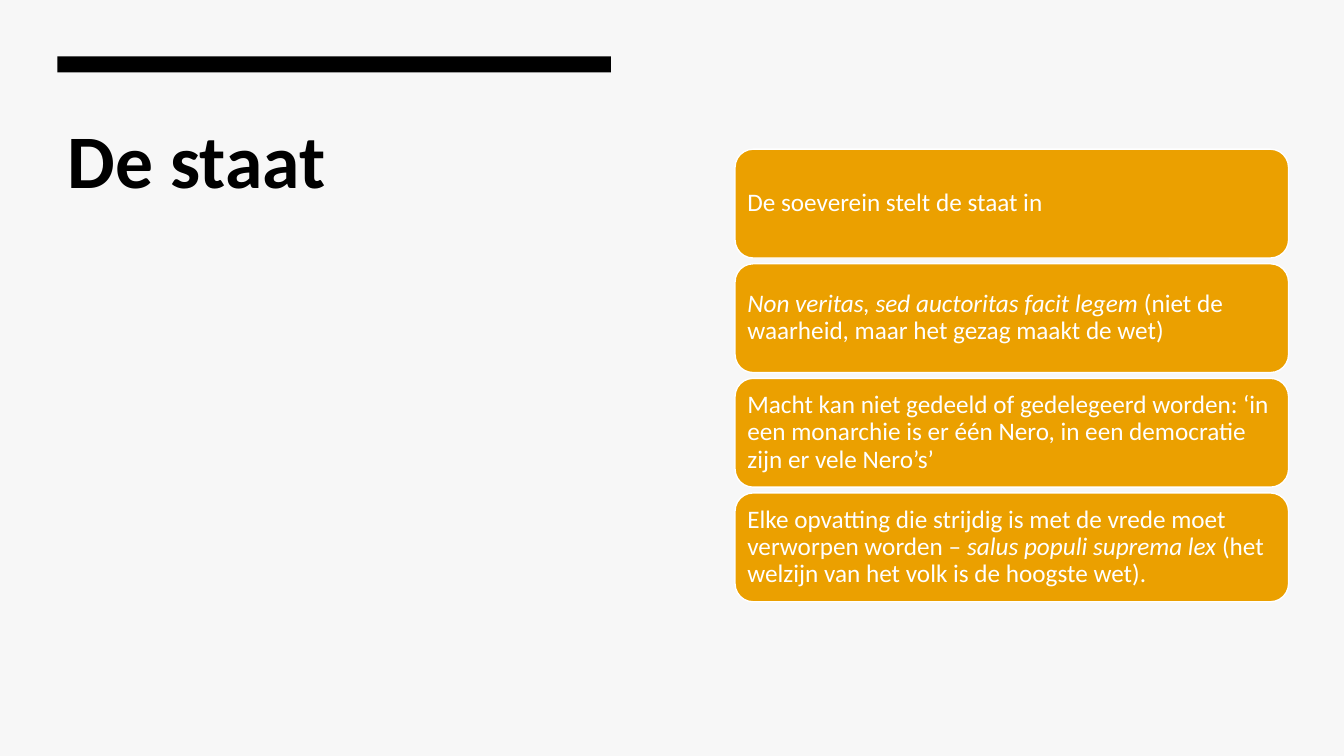
"""Build the slide "De staat" with a title and four stacked statements."""
from dataclasses import dataclass

from pptx import Presentation
from pptx import util as u
from pptx.dml.color import RGBColor
from pptx.enum import shapes, text


@dataclass(frozen=True)
class Theme:
    font: str = "Calibri"
    title_size: int = 54
    body_size: int = 18
    background: str = "F7F7F7"
    ink: str = "000000"
    card: str = "EBA000"
    light: str = "FFFFFF"


STATEMENTS = [
    [("De soeverein stelt de staat in", False)],
    [("Non veritas, sed auctoritas facit legem ", True),
     ("(niet de waarheid, maar het gezag maakt de wet)", False)],
    [("Macht kan niet gedeeld of gedelegeerd worden: ‘in een monarchie is er "
      "één Nero, in een democratie zijn er vele Nero’s’", False)],
    [("Elke opvatting die strijdig is met de vrede moet verworpen worden – ", False),
     ("salus populi suprema lex ", True),
     ("(het welzijn van het volk is de hoogste wet).", False)],
]
LEFT, COLUMN_WIDTH = 0.57, 5.49
CARD_LEFT, FIRST_CARD_TOP, LAST_CARD_TOP, CARD_HEIGHT = 7.29, 1.48, 4.89, 1.08
CARD_PITCH = (LAST_CARD_TOP - FIRST_CARD_TOP) / (len(STATEMENTS) - 1)


def apply(target, values):
    for name, value in values.items():
        setattr(target, name, value)


class SlideBuilder:
    def __init__(self, slide, theme):
        self.slide = slide
        self.theme = theme
        self.fill(slide.background, theme.background)

    def fill(self, target, color):
        target.fill.solid()
        target.fill.fore_color.rgb = RGBColor.from_string(color)

    def add_text(self, shape, runs, size, color, frame_format, paragraph_format, bold=False):
        frame = shape.text_frame
        apply(frame, {"word_wrap": True, "auto_size": text.MSO_AUTO_SIZE.NONE, **frame_format})
        paragraph = frame.paragraphs[0]
        apply(paragraph, {"alignment": text.PP_ALIGN.LEFT, **paragraph_format})
        for words, italic in runs:
            run = paragraph.add_run()
            run.text = words
            apply(run.font, {"name": self.theme.font, "size": u.Pt(size),
                             "bold": bold, "italic": italic})
            run.font.color.rgb = RGBColor.from_string(color)

    def title(self, words, left, top, width, height):
        title = self.slide.shapes.title
        apply(title, {"left": u.Inches(left), "top": u.Inches(top),
                      "width": u.Inches(width), "height": u.Inches(height)})
        self.add_text(title, [(words, False)], self.theme.title_size, self.theme.ink,
                      {"vertical_anchor": text.MSO_ANCHOR.TOP}, {}, bold=True)

    def block(self, kind, color, left, top, width, height):
        shape = self.slide.shapes.add_shape(
            kind, u.Inches(left), u.Inches(top), u.Inches(width), u.Inches(height))
        shape.shadow.inherit = False
        self.fill(shape, color)
        shape.line.fill.background()
        return shape

    def bar(self, left, top, width, height):
        self.block(shapes.MSO_SHAPE.RECTANGLE, self.theme.ink, left, top, width, height)

    def card(self, runs, left, top, width, height):
        card = self.block(shapes.MSO_SHAPE.ROUNDED_RECTANGLE, self.theme.card,
                          left, top, width, height)
        self.fill(card.line, self.theme.light)
        card.line.width = u.Pt(1)
        sides = ("margin_left", "margin_right", "margin_top", "margin_bottom")
        margins = dict.fromkeys(sides, u.Inches(0.07))
        self.add_text(card, runs, self.theme.body_size, self.theme.light,
                      {"vertical_anchor": text.MSO_ANCHOR.MIDDLE, **margins},
                      {"line_spacing": 0.9})


def main():
    presentation = Presentation()
    apply(presentation, {"slide_width": u.Inches(13.33), "slide_height": u.Inches(7.5)})
    slide = presentation.slides.add_slide(presentation.slide_layouts.get_by_name("Title Only"))
    builder = SlideBuilder(slide, Theme())
    builder.bar(LEFT, 0.56, COLUMN_WIDTH, 0.16)
    builder.title("De staat", LEFT, 1.07, COLUMN_WIDTH, 5.33)
    for row, runs in enumerate(STATEMENTS):
        builder.card(runs, CARD_LEFT, FIRST_CARD_TOP + row * CARD_PITCH,
                     COLUMN_WIDTH, CARD_HEIGHT)
    presentation.save("out.pptx")


if __name__ == "__main__":
    main()
